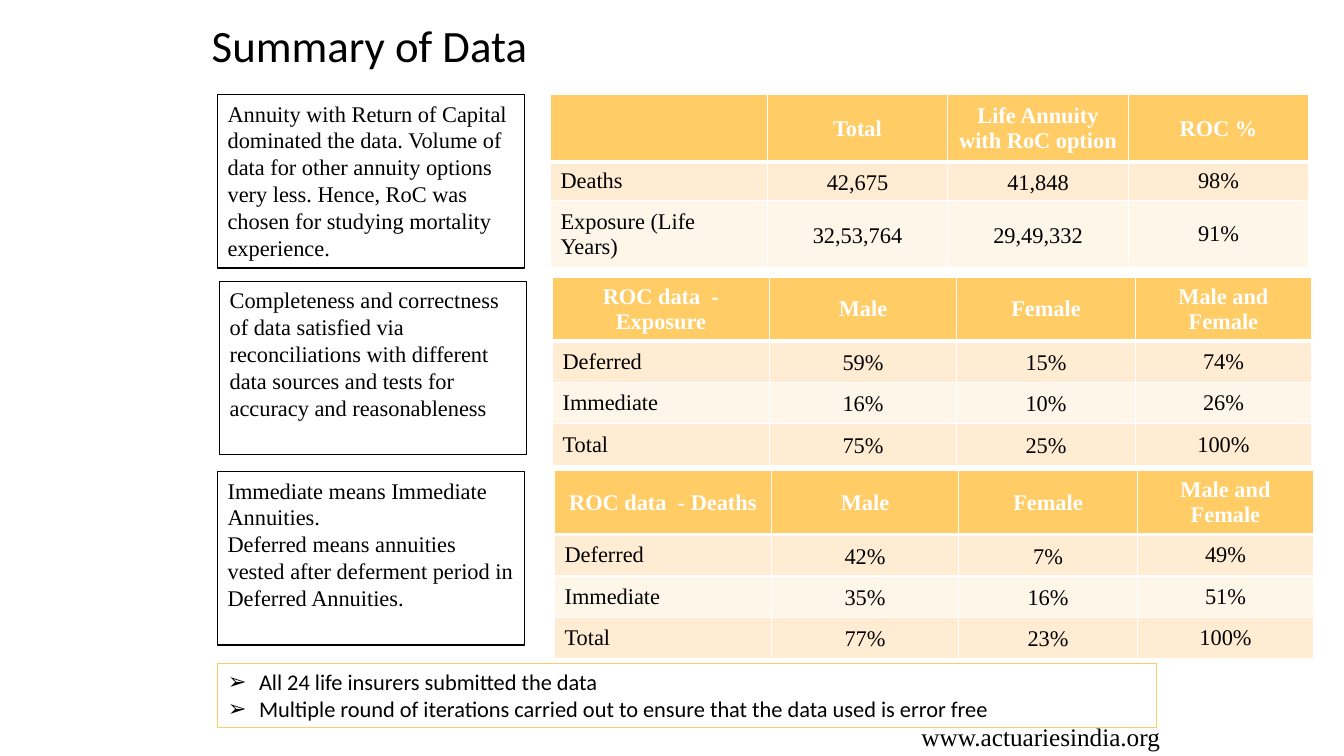
import dataclasses

import lxml.etree
import pptx
import pptx.dml.color
import pptx.enum.shapes
import pptx.enum.text
import pptx.oxml.ns
import pptx.util


@dataclasses.dataclass(frozen=True)
class Theme:
    black: str = "000000"
    white: str = "FFFFFF"
    gold: str = "FFCC66"
    bands: tuple = ("FFF6EA", "FFECD3")
    serif: str = "Times New Roman"
    sans: str = "Calibri"
    head: int = 32
    site: int = 18
    text: int = 16


theme = Theme()
rgb = pptx.dml.color.RGBColor.from_string
align = pptx.enum.text.PP_ALIGN
anchor = pptx.enum.text.MSO_ANCHOR
qn = pptx.oxml.ns.qn

deck = pptx.Presentation()
deck.slide_width = pptx.util.Inches(13.33)
deck.slide_height = pptx.util.Inches(7.5)
slide = deck.slides.add_slide(deck.slide_layouts[1])
shapes = slide.shapes


def area(left, top, width, height):
    """Turn percent shares of the slide into lengths."""
    across, down = deck.slide_width / 100, deck.slide_height / 100
    return [round(n) for n in (left * across, top * down, width * across, height * down)]


def write(frame, text, font, size, color=theme.black, bold=False, side=align.LEFT):
    frame.text = text
    frame.word_wrap = True
    for par in frame.paragraphs:
        par.alignment = side
        par.space_before = pptx.util.Pt(0)
        for run in par.runs:
            run.font.name = font
            run.font.size = pptx.util.Pt(size)
            run.font.bold = bold
            run.font.color.rgb = rgb(color)


# Title and site address
title = shapes.title
title.left, title.top, title.width, title.height = area(15, 0.13, 74.42, 11.6)
write(title.text_frame, "Summary of Data", theme.sans, theme.head)
title.text_frame.vertical_anchor = anchor.MIDDLE

site = shapes.add_textbox(*area(67.82, 94.8, 23.78, 5.33))
write(site.text_frame, "www.actuariesindia.org", theme.serif, theme.site)

# Data tables: left, top, column shares, row shares, cells
wide = (16.13, 13.95, 13.28, 13.13)
high = (7.33, 5.47, 5.47, 5.47)
tables = [
    (40.96, 12.53, (16.13, 13.43, 13.43, 13.43), (8.93, 5.07, 8.93), [
        ("", "Total", "Life Annuity\nwith RoC option", "ROC %"),
        ("Deaths", "42,675", "41,848", "98%"),
        ("Exposure (Life Years)", "32,53,764", "29,49,332", "91%")]),
    (41.11, 36.67, wide, high, [
        ("ROC data  - Exposure", "Male", "Female", "Male and Female"),
        ("Deferred", "59%", "15%", "74%"),
        ("Immediate", "16%", "10%", "26%"),
        ("Total", "75%", "25%", "100%")]),
    (41.26, 62.27, wide, high, [
        ("ROC data  - Deaths", "Male", "Female", "Male and Female"),
        ("Deferred", "42%", "7%", "49%"),
        ("Immediate", "35%", "16%", "51%"),
        ("Total", "77%", "23%", "100%")]),
]
for left, top, cols, rows, data in tables:
    place = area(left, top, sum(cols), sum(rows))
    grid = shapes.add_table(len(rows), len(cols), *place).table
    for col, share in zip(grid.columns, cols):
        col.width = area(0, 0, share, 0)[2]
    for r, (share, line) in enumerate(zip(rows, data)):
        grid.rows[r].height = area(0, 0, 0, share)[3]
        for c, text in enumerate(line):
            cell = grid.cell(r, c)
            head = r == 0
            write(cell.text_frame, text, theme.serif, theme.text,
                  theme.white if head else theme.black, head,
                  align.CENTER if head or c else align.LEFT)
            cell.vertical_anchor = anchor.MIDDLE
            if not head and c in (1, 2):
                cell.margin_left = cell.margin_right = pptx.util.Inches(0.01)
                cell.margin_top = cell.margin_bottom = 0
                cell.text_frame.paragraphs[0].line_spacing = 1.1
            props = cell._tc.get_or_add_tcPr()
            for edge in "LRTB":
                thick = (r, edge) in ((0, "B"), (1, "T"))
                rule = lxml.etree.SubElement(props, qn("a:ln" + edge))
                rule.set("w", str(pptx.util.Pt(3 if thick else 1)))
                paint = lxml.etree.SubElement(rule, qn("a:solidFill"))
                lxml.etree.SubElement(paint, qn("a:srgbClr")).set("val", theme.white)
            cell.fill.solid()
            cell.fill.fore_color.rgb = rgb(theme.gold if head else theme.bands[r % 2])

# Notes beside the tables
notes = [
    (16.2, 12.53, "Annuity with Return of Capital dominated the data. Volume of data for "
     "other annuity options very less. Hence, RoC was chosen for studying mortality experience."),
    (16.35, 37.2, "Completeness and correctness of data satisfied via reconciliations with "
     "different data sources and tests for accuracy and reasonableness"),
    (16.2, 62.4, "Immediate means Immediate Annuities.\n"
     "Deferred means annuities vested after deferment period in Deferred Annuities."),
]
for left, top, text in notes:
    box = shapes.add_shape(pptx.enum.shapes.MSO_SHAPE.RECTANGLE, *area(left, top, 22.8, 22.93))
    box.shadow.inherit = False
    box.fill.background()
    box.line.color.rgb = rgb(theme.black)
    box.line.width = pptx.util.Pt(0.75)
    write(box.text_frame, text, theme.serif, theme.text)
    box.text_frame.vertical_anchor = anchor.TOP

# Closing points
points = slide.placeholders[1]
points.left, points.top, points.width, points.height = area(16.2, 87.73, 69.84, 8.53)
points.line.color.rgb = rgb(theme.gold)
points.line.width = pptx.util.Pt(0.75)
write(points.text_frame, "All 24 life insurers submitted the data\n"
      "Multiple round of iterations carried out to ensure that the data used is error free",
      theme.sans, theme.text)
points.text_frame.auto_size = pptx.enum.text.MSO_AUTO_SIZE.NONE
for par in points.text_frame.paragraphs:
    props = par._p.get_or_add_pPr()
    indent = pptx.util.Inches(0.31)
    props.set("marL", str(indent))
    props.set("indent", str(-indent))
    lxml.etree.SubElement(props, qn("a:buChar")).set("char", "➢")

deck.save("out.pptx")
